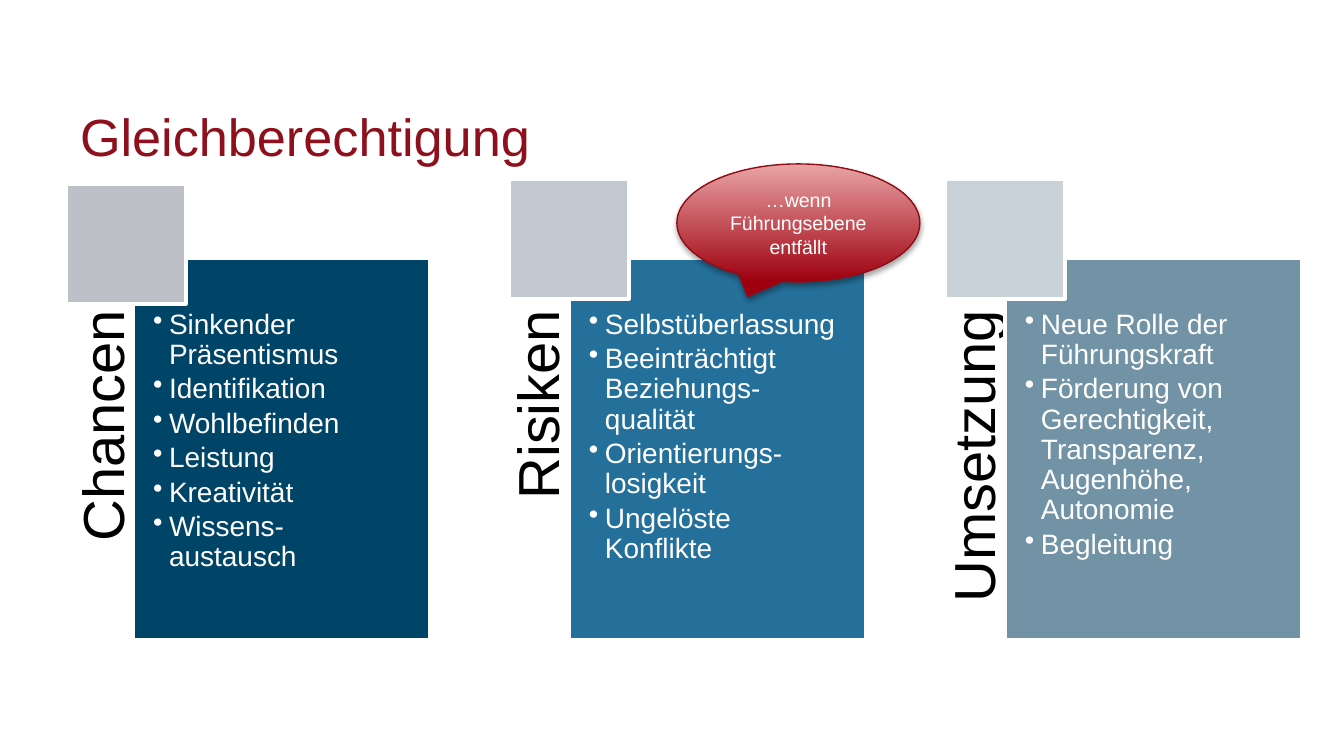
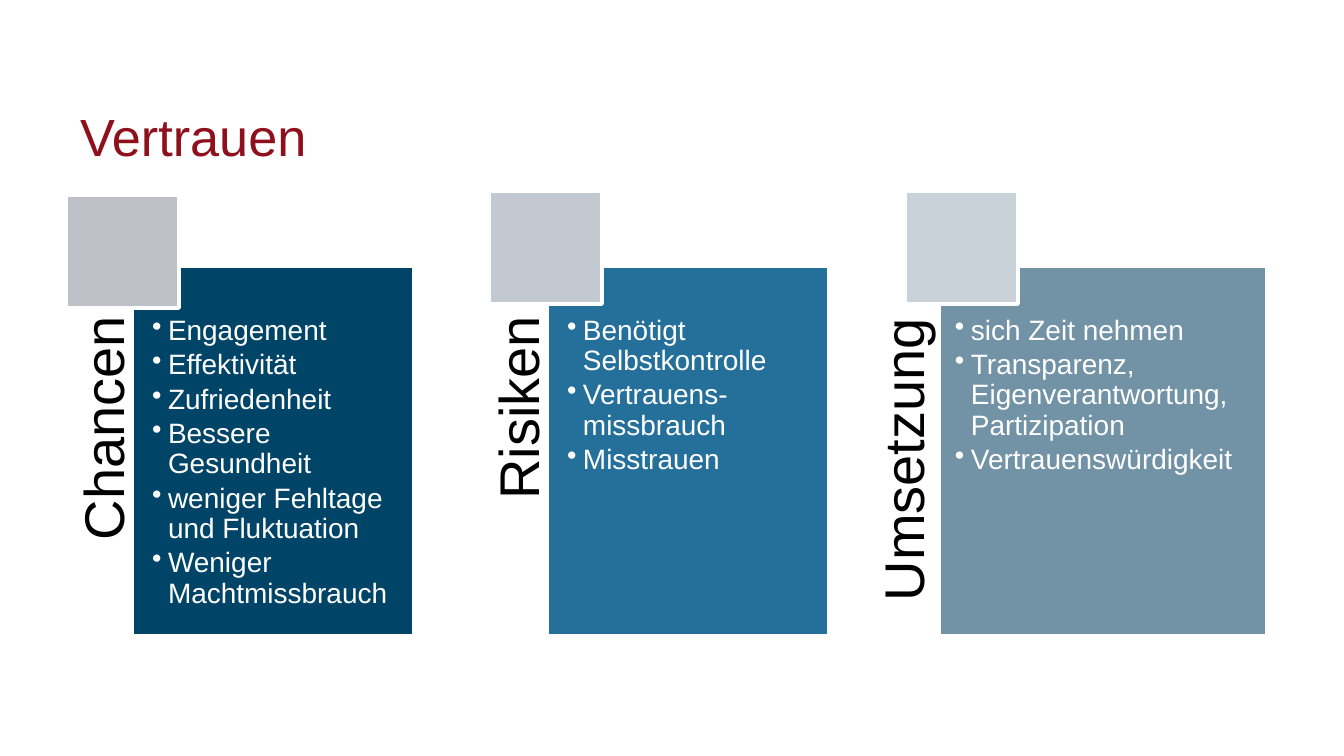
from lxml import etree
from pptx import Presentation
from pptx import util as u
from pptx.dml.color import RGBColor
from pptx.enum import shapes, text
from pptx.oxml import ns

PX = 9144000 / 1344
FONT = "Arial"
TITLE_RED = RGBColor(0x8E, 0x10, 0x1C)
BLACK = RGBColor(0, 0, 0)
WHITE = RGBColor(0xFF, 0xFF, 0xFF)
CALLOUT_DARK = RGBColor(0x9E, 0x00, 0x0F)
CALLOUT_LIGHT = RGBColor(0xE9, 0xA4, 0xA5)
CALLOUT_LINE = RGBColor(0x8E, 0x0D, 0x19)

# heading, panel colour, square colour
COLUMNS = [
    ("Chancen", RGBColor(0x00, 0x44, 0x67), RGBColor(0xBD, 0xC1, 0xC7)),
    ("Risiken", RGBColor(0x25, 0x70, 0x9A), RGBColor(0xC3, 0xC9, 0xD0)),
    ("Umsetzung", RGBColor(0x72, 0x92, 0xA6), RGBColor(0xCA, 0xD2, 0xD9)),
]

# Each panel is (left, width, side inset); each label shift moves it off the panel edge.
SLIDES = [
    {
        "title": "Gleichberechtigung",
        "lists": [
            ["Sinkender Präsentismus", "Identifikation", "Wohlbefinden", "Leistung",
             "Kreativität", "Wissens-austausch"],
            ["Selbstüberlassung", "Beeinträchtigt Beziehungs-qualität",
             "Orientierungs-losigkeit", "Ungelöste Konflikte"],
            ["Neue Rolle der Führungskraft",
             "Förderung von Gerechtigkeit, Transparenz, Augenhöhe, Autonomie",
             "Begleitung"],
        ],
        "top": 258, "height": 382, "inset": 52,
        "panels": [(133, 297, 20), (569, 297, 20), (1005, 297, 20)],
        "squares": [(66, 184), (509, 179), (945, 179)], "square": 120,
        "label": 59, "label_pt": 31, "shifts": [(0, 0), (0, 0), (0, 0)],
        "callout": "…wenn Führungsebene entfällt",
    },
    {
        "title": "Vertrauen",
        "lists": [
            ["Engagement", "Effektivität", "Zufriedenheit", "Bessere Gesundheit",
             "weniger Fehltage und Fluktuation", "Weniger Machtmissbrauch"],
            ["Benötigt Selbstkontrolle", "Vertrauens-missbrauch", "Misstrauen"],
            ["sich Zeit nehmen", "Transparenz, Eigenverantwortung, Partizipation",
             "Vertrauenswürdigkeit"],
        ],
        "top": 266, "height": 370, "inset": 50,
        "panels": [(132, 282, 20), (547, 282, 20), (939, 328, 16)],
        "squares": [(66, 195), (489, 191), (905, 191)], "square": 113,
        "label": 56, "label_pt": 30, "shifts": [(0, 0), (0, 0), (-7, 2)],
    },
]


def px(*lengths):
    return [u.Emu(round(n * PX)) for n in lengths]


def set_frame(tf, insets, anchor=text.MSO_ANCHOR.TOP):
    """Wrap the frame and set its left, top, right and bottom insets."""
    tf.word_wrap = True
    tf.auto_size = text.MSO_AUTO_SIZE.NONE
    tf.vertical_anchor = anchor
    tf.margin_left, tf.margin_top, tf.margin_right, tf.margin_bottom = px(*insets)


def style(p, size, color, align):
    p.alignment = align
    for r in p.runs:
        r.font.name, r.font.size, r.font.color.rgb = FONT, u.Pt(size), color


def add_box(s, kind, box, fill, line=WHITE, width=2):
    sp = s.shapes.add_shape(kind, *px(*box))
    sp.shadow.inherit = False
    if fill is not None:
        sp.fill.solid()
        sp.fill.fore_color.rgb = fill
    sp.line.color.rgb = line
    sp.line.width = u.Pt(width)
    return sp


def add_title(s, words):
    sp = s.shapes.title
    sp.left, sp.top, sp.width, sp.height = px(67, 90, 898, 153)
    set_frame(sp.text_frame, (13, 14, 13, 7))
    sp.text_frame.text = words
    style(sp.text_frame.paragraphs[0], 28, TITLE_RED, text.PP_ALIGN.LEFT)


def add_label(s, words, right, middle, length, height, inset, size):
    """Add a heading that reads upwards and ends at the given right edge."""
    sp = s.shapes.add_textbox(
        *px(right - height / 2 - length / 2, middle - height / 2, length, height))
    sp.rotation = 270
    set_frame(sp.text_frame, (0, 0, inset, 0))
    sp.text_frame.text = words
    p = sp.text_frame.paragraphs[0]
    p.line_spacing = 0.9
    style(p, size, BLACK, text.PP_ALIGN.RIGHT)


def fill_list(tf, items):
    tf.text = "\n".join(items)
    indent = px(16)[0]
    for p in tf.paragraphs:
        pPr = p._p.get_or_add_pPr()
        pPr.set("marL", str(indent))
        pPr.set("indent", str(-indent))
        etree.SubElement(pPr, ns.qn("a:buChar"), char="•")
        p.line_spacing = 0.9
        p.space_after = u.Pt(2.25)
        style(p, 15, WHITE, text.PP_ALIGN.LEFT)


def add_callout(s, words):
    sp = add_box(s, shapes.MSO_SHAPE.OVAL_CALLOUT, (677, 164, 243, 118),
                 None, CALLOUT_LINE, 0.75)
    sp.fill.gradient()
    sp.fill.gradient_angle = 90
    for stop, position, color in zip(sp.fill.gradient_stops, (0, 1),
                                     (CALLOUT_DARK, CALLOUT_LIGHT)):
        stop.position = position
        stop.color.rgb = color
    effects = sp._element.spPr.find(ns.qn("a:effectLst"))
    shadow = etree.SubElement(effects, ns.qn("a:outerShdw"), blurRad=str(u.Pt(3.1)),
                              dist=str(u.Pt(1.8)), dir="5400000", rotWithShape="0")
    color = etree.SubElement(shadow, ns.qn("a:srgbClr"), val=str(BLACK))
    etree.SubElement(color, ns.qn("a:alpha"), val="35000")
    set_frame(sp.text_frame, (13, 7, 13, 7), text.MSO_ANCHOR.MIDDLE)
    sp.text_frame.text = words
    style(sp.text_frame.paragraphs[0], 10.5, WHITE, text.PP_ALIGN.CENTER)


def build_slide(prs, d):
    s = prs.slides.add_slide(prs.slide_layouts.get_by_name("Title Only"))
    add_title(s, d["title"])
    top, height, inset = d["top"], d["height"], d["inset"]
    parts = zip(COLUMNS, d["lists"], d["panels"], d["squares"], d["shifts"])
    for (heading, dark, light), items, (left, width, side), corner, (dx, dy) in parts:
        add_label(s, heading, left + dx, top + height / 2 + dy, height,
                  d["label"], inset, d["label_pt"])
        panel = add_box(s, shapes.MSO_SHAPE.RECTANGLE, (left, top, width, height), dark)
        set_frame(panel.text_frame, (side, inset, side, side))
        fill_list(panel.text_frame, items)
        add_box(s, shapes.MSO_SHAPE.RECTANGLE, (*corner, d["square"], d["square"]), light)
    if "callout" in d:
        add_callout(s, d["callout"])


def main():
    prs = Presentation()
    prs.slide_width, prs.slide_height = px(1344, 756)
    for d in SLIDES:
        build_slide(prs, d)
    prs.save("out.pptx")


if __name__ == "__main__":
    main()
